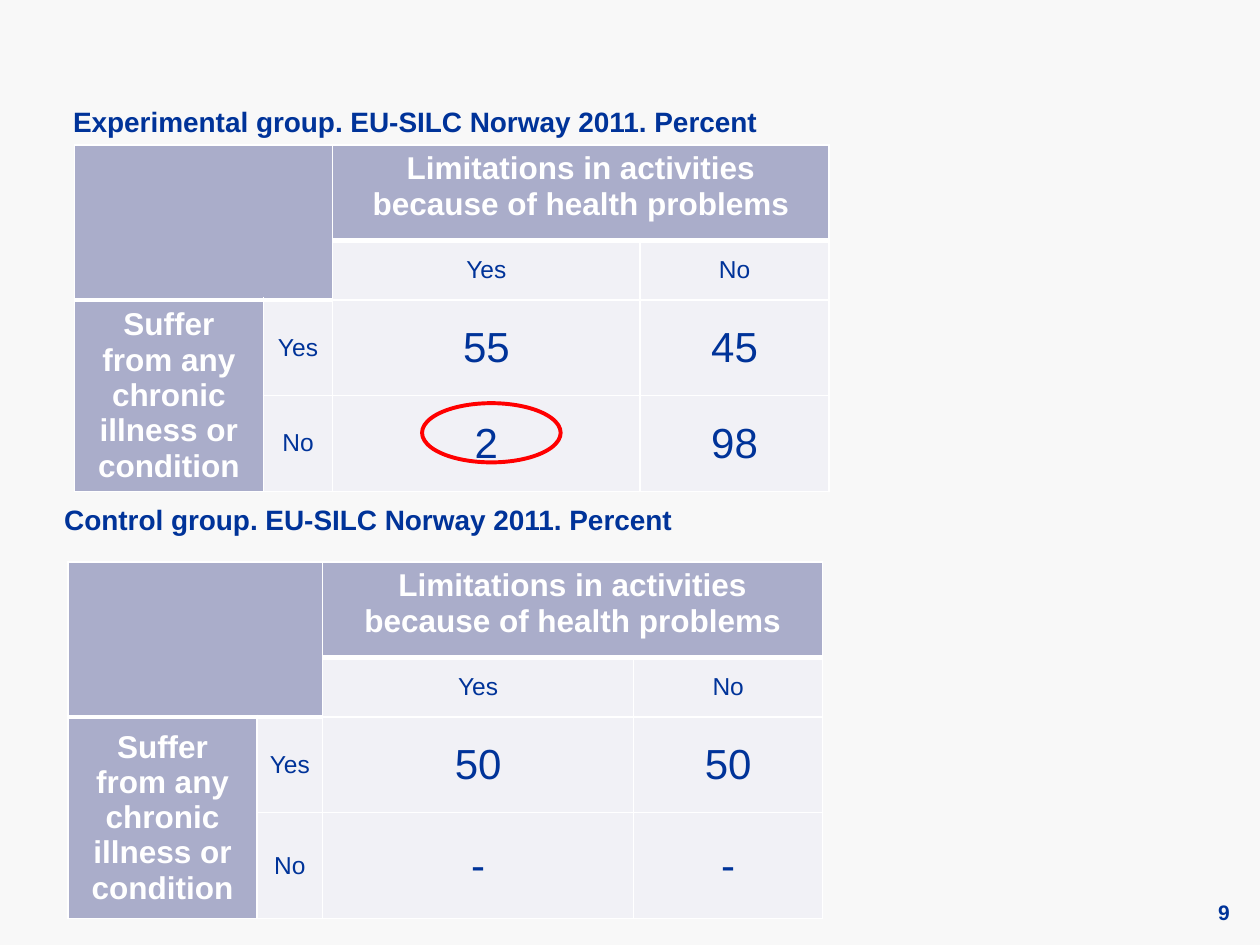
from lxml import etree
from pptx import Presentation
from pptx.dml.color import RGBColor
from pptx.enum import shapes, text
from pptx.oxml.ns import qn
from pptx.util import Inches, Pt

# Content
HEADING = "Limitations in activities because of health problems"
STUB = "Suffer from any chronic illness or condition"
ANSWERS = ("Yes", "No")
GROUPS = [
    dict(title="Experimental group. EU-SILC Norway 2011. Percent",
         title_at=(0.58, 0.83), table_at=(0.59, 1.15),
         cols=(1.5, 0.55, 2.44, 1.5), values=(("55", "45"), ("2", "98"))),
    dict(title="Control group. EU-SILC Norway 2011. Percent",
         title_at=(0.51, 3.99), table_at=(0.54, 4.46),
         cols=(1.5, 0.52, 2.47, 1.5), values=(("50", "50"), ("-", "-"))),
]
ROWS = (0.76, 0.47, 0.76, 0.76)
TITLE_SIZE = (9.17, 0.32)
PAGE_NUMBER = "9"

THEME = dict(font="Arial", back="F8F8F8", ink="003399", head="AAADCA",
             body="F1F1F6", white="FFFFFF", mark="FF0000",
             title=16, heading=18, label=14, value=24, number=12)


def color(name):
    return RGBColor.from_string(THEME[name])


def write(tf, words, size="label", ink="ink", bold=False,
          align=text.PP_ALIGN.LEFT, anchor=text.MSO_ANCHOR.TOP):
    """Put formatted words in a text frame with no insets."""
    tf.word_wrap = True
    tf.vertical_anchor = anchor
    tf.margin_left = tf.margin_right = tf.margin_top = tf.margin_bottom = 0
    write_paragraph(tf.paragraphs[0], words, size, ink, bold, align)


def write_paragraph(p, words, size, ink, bold, align):
    p.alignment = align
    r = p.add_run()
    r.text = words
    r.font.name = THEME["font"]
    r.font.size = Pt(THEME[size])
    r.font.bold = bold
    r.font.color.rgb = color(ink)


def style_cell(cell, fill, bottom=1):
    """Draw white borders, then fill the cell."""
    props = cell._tc.get_or_add_tcPr()
    for side, width in (("L", 1), ("R", 1), ("T", 1), ("B", bottom)):
        ln = etree.SubElement(props, qn(f"a:ln{side}"), w=str(Pt(width)))
        solid = etree.SubElement(ln, qn("a:solidFill"))
        etree.SubElement(solid, qn("a:srgbClr"), val=THEME["white"])
    cell.fill.solid()
    cell.fill.fore_color.rgb = color(fill)


def fill_cell(cell, words, size="label", ink="ink", bold=False,
              anchor=text.MSO_ANCHOR.MIDDLE):
    cell.vertical_anchor = anchor
    write_paragraph(cell.text_frame.paragraphs[0], words, size, ink, bold,
                    text.PP_ALIGN.CENTER)


def add_cross_table(s, group):
    x, y = group["table_at"]
    cols = group["cols"]
    table = s.shapes.add_table(len(ROWS), len(cols), Inches(x), Inches(y),
                               Inches(sum(cols)), Inches(sum(ROWS))).table
    for column, width in zip(table.columns, cols):
        column.width = Inches(width)
    for row, height in zip(table.rows, ROWS):
        row.height = Inches(height)

    # Corner, column heading and row heading span several cells
    for first, last in (((0, 0), (1, 1)), ((0, 2), (0, 3)), ((2, 0), (3, 0))):
        table.cell(*first).merge(table.cell(*last))
    for i in range(len(ROWS)):
        for j in range(len(cols)):
            header = i == 0 or (i == 1 and j < 2)
            style_cell(table.cell(i, j), "head" if header or j == 0 else "body",
                       bottom=3 if header else 1)

    heading = dict(size="heading", ink="white", bold=True)
    fill_cell(table.cell(0, 2), HEADING, anchor=text.MSO_ANCHOR.TOP, **heading)
    fill_cell(table.cell(2, 0), STUB, **heading)
    for i, answer in enumerate(ANSWERS):
        fill_cell(table.cell(1, 2 + i), answer)
        fill_cell(table.cell(2 + i, 1), answer)
        for j, value in enumerate(group["values"][i]):
            fill_cell(table.cell(2 + i, 2 + j), value, size="value")


def main():
    prs = Presentation()
    prs.slide_width, prs.slide_height = Inches(10), Inches(7.5)
    s = prs.slides.add_slide(prs.slide_layouts[5])
    s.background.fill.solid()
    s.background.fill.fore_color.rgb = color("back")

    # A caption and a table for each group; the first caption is the title
    for k, group in enumerate(GROUPS):
        box = [Inches(v) for v in group["title_at"] + TITLE_SIZE]
        if k == 0:
            sp = s.shapes.title
            sp.left, sp.top, sp.width, sp.height = box
        else:
            sp = s.shapes.add_textbox(*box)
        write(sp.text_frame, group["title"], size="title", bold=True)
        add_cross_table(s, group)

    # Page number
    sp = s.shapes.add_textbox(Inches(9.25), Inches(7.11), Inches(0.51), Inches(0.26))
    write(sp.text_frame, PAGE_NUMBER, size="number", bold=True,
          align=text.PP_ALIGN.RIGHT, anchor=text.MSO_ANCHOR.MIDDLE)

    # Ring around the value of interest
    ring = s.shapes.add_shape(shapes.MSO_SHAPE.OVAL, Inches(3.35), Inches(3.2),
                              Inches(1.1), Inches(0.47))
    ring.shadow.inherit = False
    ring.fill.background()
    ring.line.color.rgb = color("mark")
    ring.line.width = Pt(2.25)

    prs.save("out.pptx")


if __name__ == "__main__":
    main()
